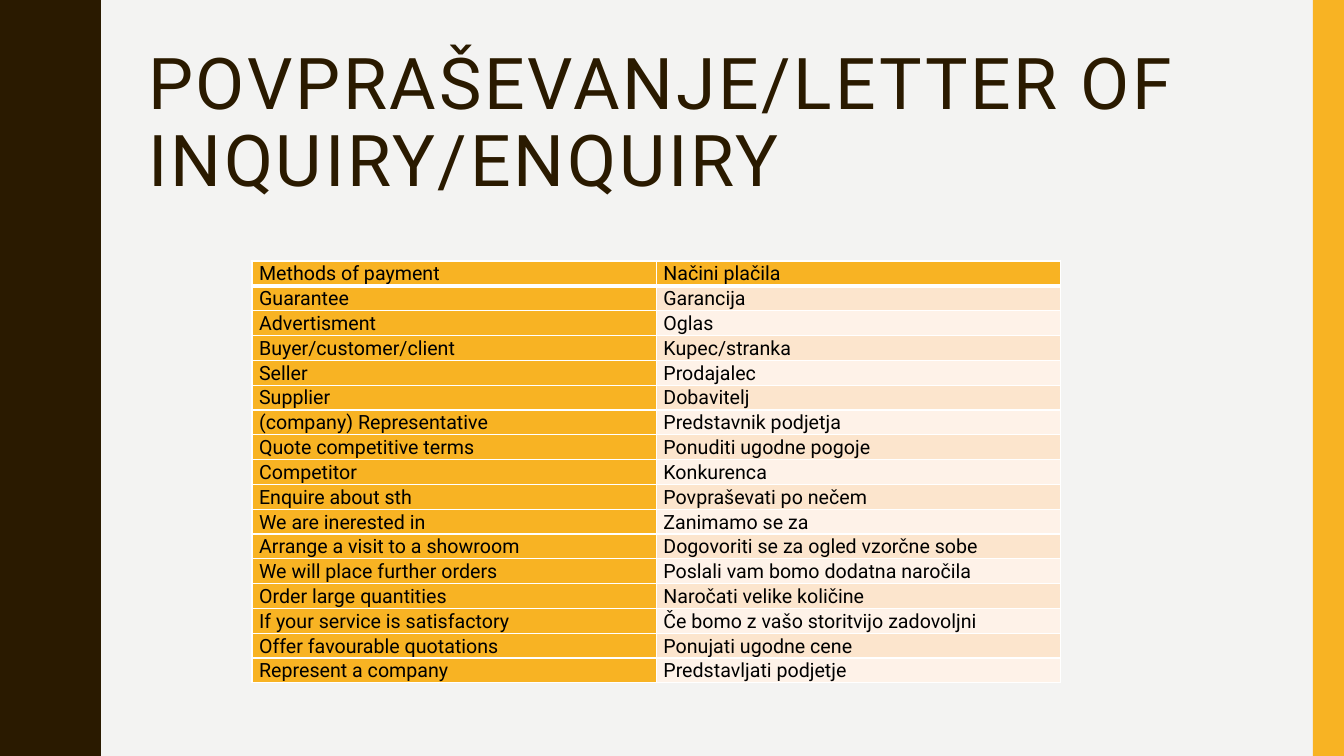
from lxml import etree
from pptx import Presentation
from pptx.dml.color import RGBColor
from pptx.enum.shapes import MSO_SHAPE
from pptx.enum.text import MSO_ANCHOR, MSO_AUTO_SIZE, PP_ALIGN
from pptx.oxml.ns import qn
from pptx.util import Inches, Pt

BACKGROUND = RGBColor(0xF3, 0xF3, 0xF2)
BROWN = RGBColor(0x2A, 0x1A, 0x00)
AMBER = RGBColor(0xF8, 0xB3, 0x23)
PEACH = RGBColor(0xFC, 0xE5, 0xCD)
CREAM = RGBColor(0xFE, 0xF2, 0xE8)
WHITE = RGBColor(0xFF, 0xFF, 0xFF)
BLACK = RGBColor(0x00, 0x00, 0x00)

PHRASES = [
    ("Methods of payment", "Načini plačila"),
    ("Guarantee", "Garancija"),
    ("Advertisment", "Oglas"),
    ("Buyer/customer/client", "Kupec/stranka"),
    ("Seller", "Prodajalec"),
    ("Supplier", "Dobavitelj"),
    ("(company) Representative", "Predstavnik podjetja"),
    ("Quote competitive terms", "Ponuditi ugodne pogoje"),
    ("Competitor", "Konkurenca"),
    ("Enquire about sth", "Povpraševati po nečem"),
    ("We are inerested in", "Zanimamo se za"),
    ("Arrange a visit to a showroom", "Dogovoriti se za ogled vzorčne sobe"),
    ("We will place further orders", "Poslali vam bomo dodatna naročila"),
    ("Order large quantities", "Naročati velike količine"),
    ("If your service is satisfactory", "Če bomo z vašo storitvijo zadovoljni"),
    ("Offer favourable quotations", "Ponujati ugodne cene"),
    ("Represent a company", "Predstavljati podjetje"),
]

# Half a wave, from its narrowest point to its crest
HALF_WAVE = [
    (0.78, 0), (0.78, 0.07), (0.79, 0.14), (0.8, 0.2), (0.81, 0.25),
    (0.83, 0.29), (0.85, 0.33), (0.87, 0.38), (0.89, 0.42), (0.91, 0.46),
    (0.93, 0.5), (0.95, 0.55), (0.96, 0.61), (0.97, 0.68), (0.97, 0.75),
]
WAVE_LENGTH = 1.5
WAVE_COUNT = 5


def paint(shape, color):
    shape.fill.solid()
    shape.fill.fore_color.rgb = color
    shape.line.fill.background()
    shape.shadow.inherit = False


def add_border(cell, side, width):
    line = etree.SubElement(cell._tc.get_or_add_tcPr(), qn(f"a:ln{side}"), w=str(Pt(width)))
    fill = etree.SubElement(line, qn("a:solidFill"))
    etree.SubElement(fill, qn("a:srgbClr"), val=str(WHITE))


presentation = Presentation()
presentation.slide_width = Inches(13.33)
presentation.slide_height = Inches(7.5)
slide = presentation.slides.add_slide(presentation.slide_layouts[5])
slide.background.fill.solid()
slide.background.fill.fore_color.rgb = BACKGROUND

# Wavy left edge and right stripe
wave = HALF_WAVE + [(x, WAVE_LENGTH - y) for x, y in reversed(HALF_WAVE[:-1])]
edge = [(x, y + WAVE_LENGTH * index) for index in range(WAVE_COUNT) for x, y in wave]
builder = slide.shapes.build_freeform(0, 0, scale=Inches(1))
builder.add_line_segments(edge + [(0, 7.5)], close=True)
paint(builder.convert_to_shape(), BROWN)

stripe = slide.shapes.add_shape(
    MSO_SHAPE.RECTANGLE, Inches(13.02), 0, Inches(0.31), Inches(7.5))
paint(stripe, AMBER)

# Title
title = slide.shapes.title
title.left, title.top = Inches(1.37), Inches(0.42)
title.width, title.height = Inches(11.13), Inches(1.63)
title_frame = title.text_frame
title_frame.text = "POVPRAŠEVANJE/LETTER OF INQUIRY/ENQUIRY"
title_frame.word_wrap = True
title_frame.auto_size = MSO_AUTO_SIZE.NONE
title_frame.vertical_anchor = MSO_ANCHOR.MIDDLE
paragraph = title_frame.paragraphs[0]
paragraph.alignment = PP_ALIGN.LEFT
paragraph.line_spacing = 0.9
run = paragraph.runs[0]
for name, value in {"name": "Roboto", "size": Pt(51)}.items():
    setattr(run.font, name, value)
run.font.color.rgb = BROWN
run._r.get_or_add_rPr().set("spc", "200")

# Phrase table
table_frame = slide.shapes.add_table(
    len(PHRASES), 2, Inches(2.5), Inches(2.59), Inches(8.02), Inches(4.24))
table = table_frame.table
table.first_row = False
table.horz_banding = False
cell_format = {
    "margin_left": Inches(0.07), "margin_right": Inches(0.07),
    "margin_top": 0, "margin_bottom": 0,
}
font_format = {"name": "Roboto", "size": Pt(14), "bold": False}

for row_index, phrases in enumerate(PHRASES):
    table.rows[row_index].height = Inches(0.22)
    band = PEACH if row_index % 2 else CREAM
    for column_index, phrase in enumerate(phrases):
        cell = table.cell(row_index, column_index)
        cell.text = phrase
        for name, value in cell_format.items():
            setattr(cell, name, value)
        paragraph = cell.text_frame.paragraphs[0]
        paragraph.line_spacing = 1.07
        font = paragraph.runs[0].font
        for name, value in font_format.items():
            setattr(font, name, value)
        font.color.rgb = BLACK
        # A thick rule parts the heading row from the rest
        top_width = 3 if row_index == 1 else 1
        bottom_width = 3 if row_index == 0 else 1
        for side, width in (("L", 1), ("R", 1), ("T", top_width), ("B", bottom_width)):
            add_border(cell, side, width)
        cell.fill.solid()
        cell.fill.fore_color.rgb = AMBER if row_index == 0 or column_index == 0 else band

presentation.save("out.pptx")
